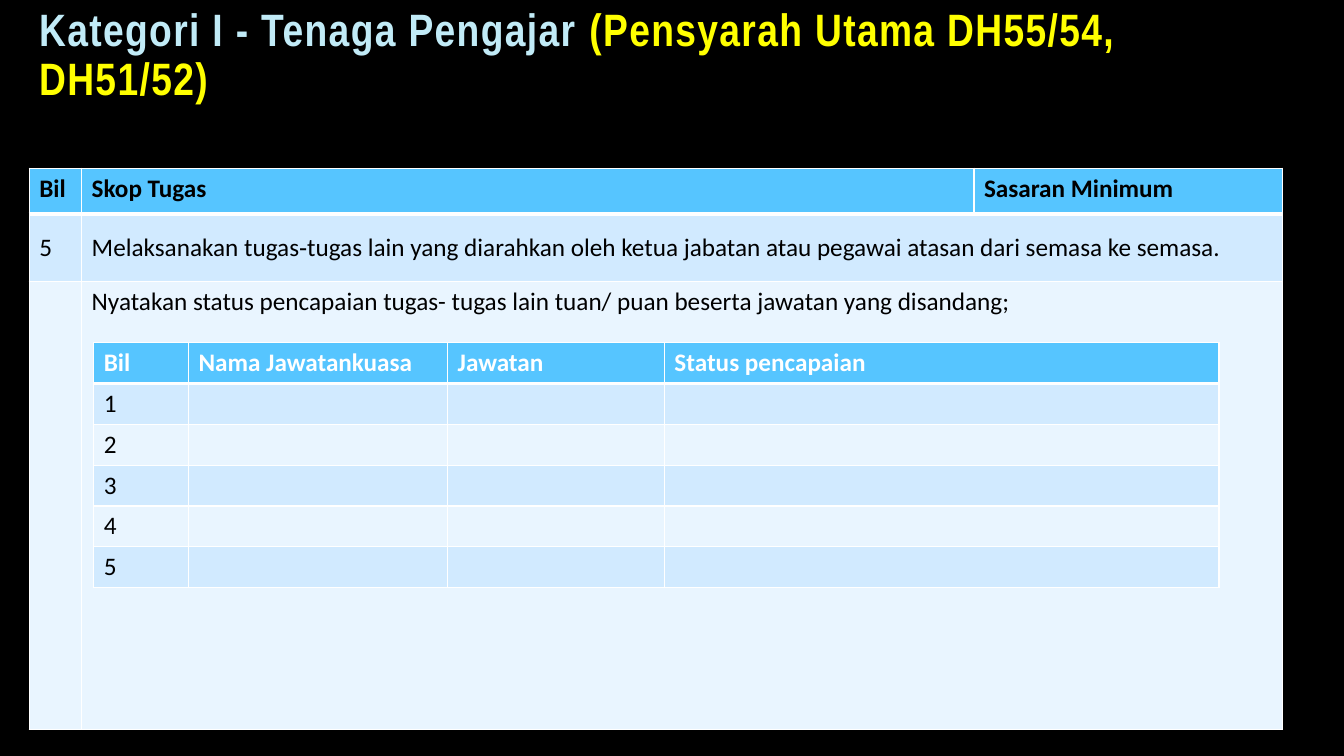
from dataclasses import dataclass

from lxml import etree
from pptx import Presentation
from pptx.dml.color import RGBColor
from pptx.enum import text
from pptx.oxml import ns
from pptx.util import Inches, Pt

HUES = {
    "back": "000000",
    "ink": "000000",
    "white": "FFFFFF",
    "head": "56C5FF",
    "odd": "D1EAFF",
    "even": "E9F5FF",
    "title": "C1EBF7",
    "grade": "FFFF00",
    "edge": "404040",
}


@dataclass
class Grid:
    left: float
    top: float
    cols: list[float]
    rows: list[float]
    words: list[list[str]]
    head: str


def hue(name: str) -> RGBColor:
    return RGBColor.from_string(HUES[name])


def line(tag: str, width: float, name: str, alpha: int = 100):
    """Make a solid line element, width in points and alpha in percent."""
    ln = etree.Element(ns.qn(tag), w=str(Pt(width)))
    fill = etree.SubElement(ln, ns.qn("a:solidFill"))
    tint = etree.SubElement(fill, ns.qn("a:srgbClr"), val=HUES[name])
    if alpha < 100:
        etree.SubElement(tint, ns.qn("a:alpha"), val=str(alpha * 1000))
    return ln


def paint(cell, row: int, word: str, head: str) -> None:
    """Fill, border and write one cell."""
    cell.fill.solid()
    cell.fill.fore_color.rgb = hue("head" if row == 0 else "odd" if row % 2 else "even")
    props = cell._tc.get_or_add_tcPr()
    wide = {"T": 3 if row == 1 else 1, "B": 3 if row == 0 else 1}
    for spot, side in enumerate("LRTB"):
        props.insert(spot, line(f"a:ln{side}", wide.get(side, 1), "white"))
    if word:
        cell.text_frame.text = word
        font = cell.text_frame.paragraphs[0].runs[0].font
        font.name, font.size, font.bold = "Calibri", Pt(18), row == 0
        font.color.rgb = hue(head if row == 0 else "ink")


def draw(slide, grid: Grid):
    table = slide.shapes.add_table(
        len(grid.rows), len(grid.cols), Inches(grid.left), Inches(grid.top),
        Inches(sum(grid.cols)), Inches(sum(grid.rows))).table
    for col, width in zip(table.columns, grid.cols):
        col.width = Inches(width)
    for row, (height, words) in enumerate(zip(grid.rows, grid.words)):
        table.rows[row].height = Inches(height)
        for col, word in enumerate(words):
            paint(table.cell(row, col), row, word, grid.head)
    return table


def title(slide) -> None:
    box = slide.shapes.add_textbox(Inches(0.29), Inches(0.42), Inches(11.37), Inches(0.67))
    frame = box.text_frame
    frame.word_wrap = True
    frame.vertical_anchor = text.MSO_ANCHOR.BOTTOM
    para = frame.paragraphs[0]
    para.line_spacing = 0.9
    parts = [("Kategori I - Tenaga Pengajar ", "title"),
             ("(Pensyarah Utama DH55/54, DH51/52)", "grade")]
    for words, name in parts:
        run = para.add_run()
        run.text = words
        font = run.font
        font.name, font.size, font.bold = "Arial Narrow", Pt(32.4), True
        font.color.rgb = hue(name)
        props = run._r.get_or_add_rPr()
        props.set("spc", "100")
        props.insert(0, line("a:ln", 0.75, "edge", 10))


def main() -> None:
    deck = Presentation()
    deck.slide_width, deck.slide_height = Inches(13.33), Inches(7.5)
    slide = deck.slides.add_slide(deck.slide_layouts[6])
    slide.background.fill.solid()
    slide.background.fill.fore_color.rgb = hue("back")
    title(slide)

    duty = draw(slide, Grid(0.29, 1.67, [0.52, 8.85, 3.06], [0.45, 0.67, 4.45], [
        ["Bil", "Skop Tugas", "Sasaran Minimum"],
        ["5", "Melaksanakan tugas‐tugas lain yang diarahkan oleh ketua jabatan "
              "atau pegawai atasan dari semasa ke semasa.", ""],
        ["", "Nyatakan status pencapaian tugas- tugas lain tuan/ puan beserta "
             "jawatan yang disandang;", ""],
    ], "ink"))
    for row in (1, 2):
        duty.cell(row, 1).merge(duty.cell(row, 2))
    for col in (0, 1):
        duty.cell(1, col).vertical_anchor = text.MSO_ANCHOR.MIDDLE

    heads = ["Bil", "Nama Jawatankuasa", "Jawatan", "Status pencapaian"]
    blanks = [[str(num), "", "", ""] for num in range(1, 6)]
    draw(slide, Grid(0.93, 3.4, [0.94, 2.57, 2.15, 5.5], [0.405] * 6,
                     [heads] + blanks, "white"))
    deck.save("out.pptx")


if __name__ == "__main__":
    main()
